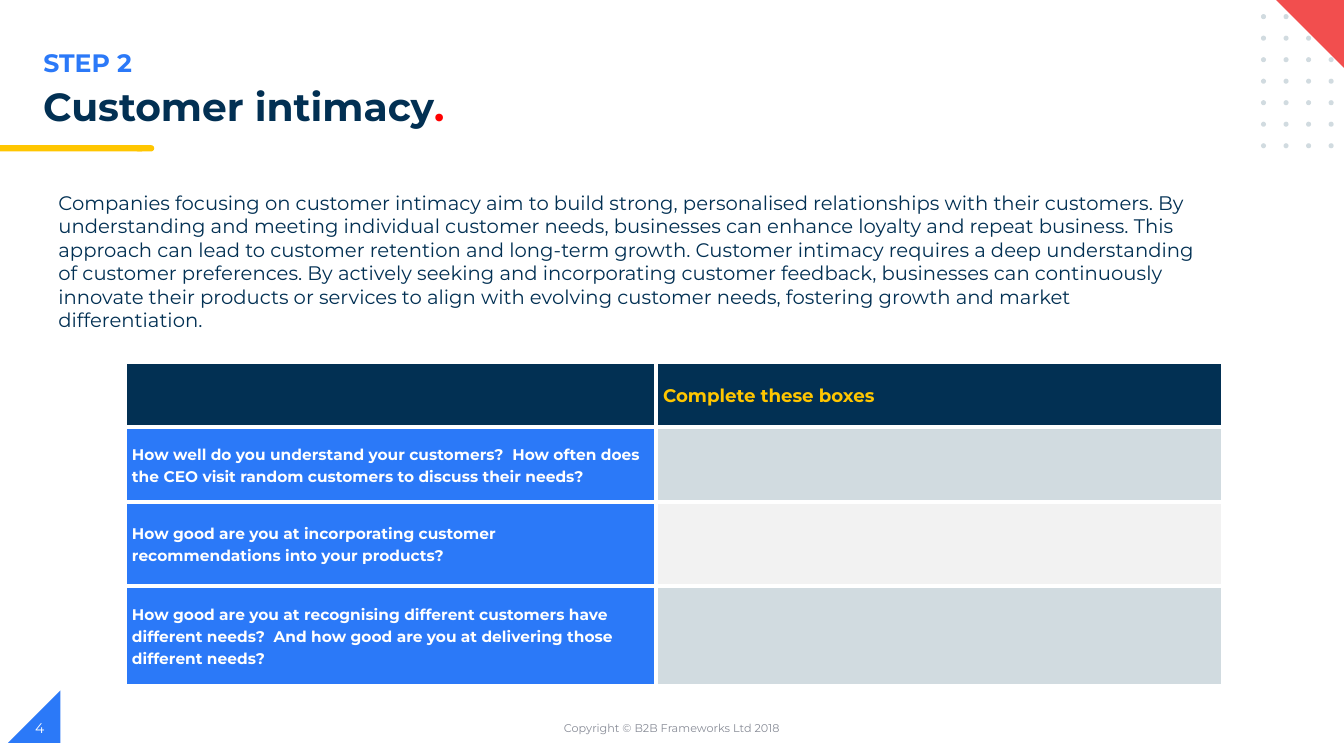
from lxml import etree
from pptx import Presentation
from pptx.dml.color import RGBColor
from pptx.enum.shapes import MSO_SHAPE as SHAPE
from pptx.enum.text import MSO_ANCHOR as ANCHOR, PP_ALIGN as ALIGN
from pptx.oxml import parse_xml
from pptx.oxml.ns import nsdecls
from pptx.util import Pt

NAVY, BLUE, YELLOW, GREY, WHITE = "023053", "2B79F8", "FFC600", "D1DBE0", "FFFFFF"


def rgb(color):
    return RGBColor.from_string(color)


def style(p, size, color, bold=False):
    p.font.name = "Montserrat"
    p.font.size = Pt(size)
    p.font.bold = bold
    p.font.color.rgb = rgb(color)


prs = Presentation()
prs.slide_width, prs.slide_height = Pt(960), Pt(540)
s = prs.slides.add_slide(prs.slide_layouts[6])

shapes = [
    (SHAPE.RIGHT_TRIANGLE, 5.8, 493.2, 37.4, 37.4, 270, BLUE),
    (SHAPE.FLOWCHART_TERMINATOR, 96.5, 103.7, 13.7, 4.5, 0, YELLOW),
    (SHAPE.RECTANGLE, 0, 103.7, 101.5, 4.5, 0, YELLOW),
]
for row in range(7):
    for col in range(4):
        shapes.append((SHAPE.OVAL, 900.7 + 16.1 * col, 10.1 + 15.37 * row, 3.6, 3.6, 0, GREY))
shapes.append((SHAPE.RIGHT_TRIANGLE, 910.8, -0.7, 51.8, 51.8, 180, "F24E4E"))

for kind, x, y, w, h, angle, color in shapes:
    sp = s.shapes.add_shape(kind, Pt(x), Pt(y), Pt(w), Pt(h))
    sp.shadow.inherit = False
    sp.rotation = angle
    sp.fill.solid()
    sp.fill.fore_color.rgb = rgb(color)
    sp.line.fill.background()

intro = (
    "Companies focusing on customer intimacy aim to build strong, personalised relationships "
    "with their customers. By understanding and meeting individual customer needs, businesses "
    "can enhance loyalty and repeat business. This approach can lead to customer retention and "
    "long-term growth. Customer intimacy requires a deep understanding of customer preferences. "
    "By actively seeking and incorporating customer feedback, businesses can continuously "
    "innovate their products or services to align with evolving customer needs, fostering "
    "growth and market differentiation."
)
texts = [
    ("STEP 2", 23.8, 30.2, 481.7, 29, 18, BLUE, True, ANCHOR.TOP, ALIGN.LEFT),
    ("Copyright © B2B Frameworks Ltd 2018", 318, 505.4, 324, 28.8, 8, "888C97", False,
     ANCHOR.MIDDLE, ALIGN.CENTER),
    ("4", 18, 505.4, 216, 28.8, 10, WHITE, False, ANCHOR.MIDDLE, ALIGN.LEFT),
    (intro, 34.6, 132.5, 826.6, 109.4, 14, NAVY, False, ANCHOR.TOP, ALIGN.LEFT),
    ("Customer intimacy", 23.8, 59, 818.6, 40.3, 28, NAVY, True, ANCHOR.TOP, ALIGN.LEFT),
]
for text, x, y, w, h, size, color, bold, anchor, align in texts:
    tf = s.shapes.add_textbox(Pt(x), Pt(y), Pt(w), Pt(h)).text_frame
    tf.word_wrap = True
    tf.vertical_anchor = anchor
    p = tf.paragraphs[0]
    p.text = text
    p.alignment = align
    style(p, size, color, bold)
    if text == "Customer intimacy":
        p.line_spacing = 0.9
        r = p.add_run()
        r.text = "."
        r.font.color.rgb = rgb("FF0000")

rows = [
    (46.6, "", "Complete these boxes", NAVY, NAVY),
    (53.3, "How well do you understand your customers?  How often does the CEO visit random "
     "customers to discuss their needs?", "", BLUE, GREY),
    (60, "How good are you at incorporating customer recommendations into your products?", "",
     BLUE, "F2F2F2"),
    (71.3, "How good are you at recognising different customers have different needs?  And how "
     "good are you at delivering those different needs?", "", BLUE, GREY),
]
table = s.shapes.add_table(4, 2, Pt(89.3), Pt(258.5), Pt(784), Pt(231.2)).table
table.columns[0].width, table.columns[1].width = Pt(379.4), Pt(404.6)
for i, (height, question, answer, left_fill, right_fill) in enumerate(rows):
    table.rows[i].height = Pt(height)
    for j, (text, fill) in enumerate([(question, left_fill), (answer, right_fill)]):
        cell = table.cell(i, j)
        cell.vertical_anchor = ANCHOR.MIDDLE
        cell.margin_left = cell.margin_right = Pt(5)
        cell.margin_top = cell.margin_bottom = 0
        tcPr = cell._tc.get_or_add_tcPr()
        for side in "LRTB":
            ln = parse_xml(f'<a:ln{side} {nsdecls("a")} w="{Pt(3)}"/>')
            solid = etree.SubElement(ln, ln.tag.replace(f"ln{side}", "solidFill"))
            etree.SubElement(solid, solid.tag.replace("solidFill", "srgbClr"), val=WHITE)
            tcPr.append(ln)
        cell.fill.solid()
        cell.fill.fore_color.rgb = rgb(fill)
        p = cell.text_frame.paragraphs[0]
        p.text = text
        p.line_spacing = 1.15
        style(p, 13 if i == 0 else 11, YELLOW if i == 0 else WHITE, True)

prs.save("out.pptx")
